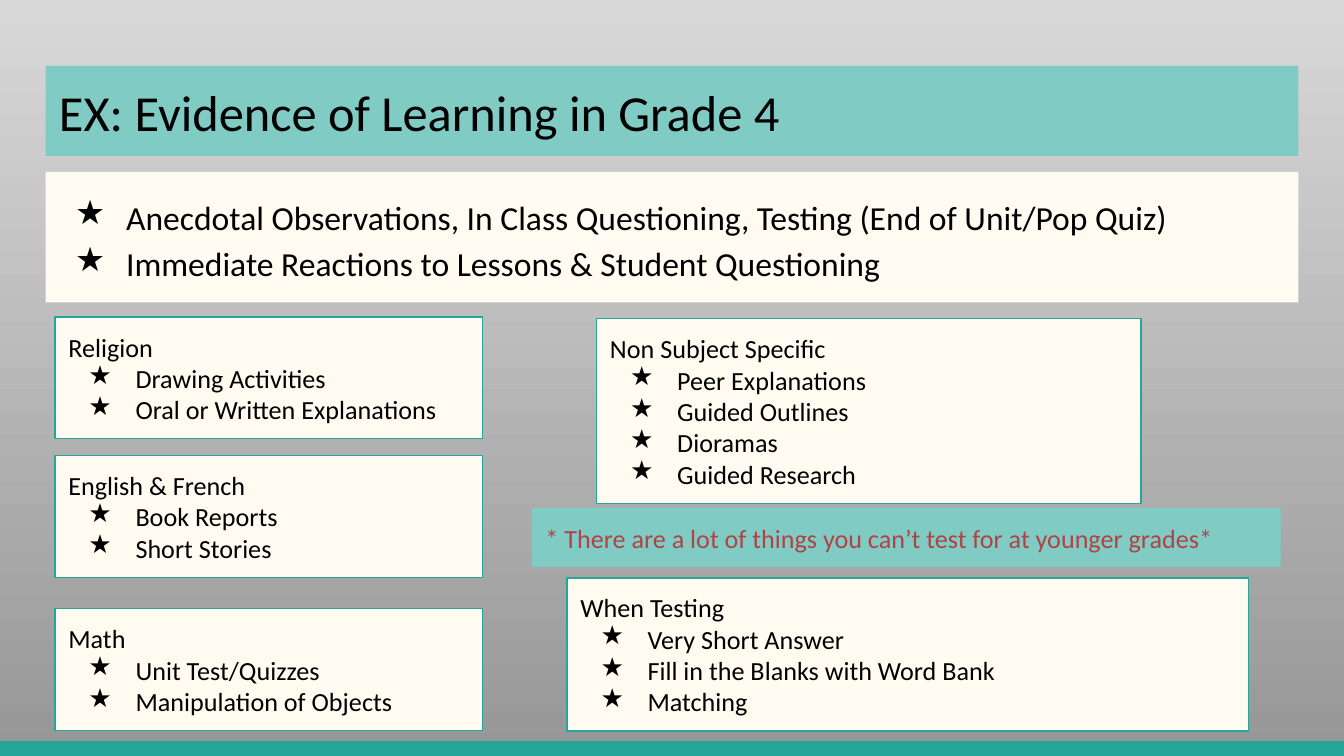
import dataclasses

import lxml.etree
import pptx
import pptx.dml.color
import pptx.enum.shapes
import pptx.enum.text
import pptx.oxml.ns
import pptx.util


@dataclasses.dataclass(frozen=True)
class Theme:
    font: str = "Calibri"
    ink: str = "000000"
    warning: str = "AF4345"
    paper: str = "FFFBF0"
    band: str = "80CBC4"
    accent: str = "26A69A"
    backdrop: tuple = ("D8D8D8", "979797")
    title_size: int = 27
    lead_size: int = 18
    card_size: int = 14
    border: float = 0.75
    bullet: str = "★"


COLUMNS, ROWS = 100, 56.25
CELL = pptx.util.Inches(0.1)
PADDING_ROWS, LINE_ROWS = 2, 2.35


def set_attributes(target, values):
    for name, value in values.items():
        setattr(target, name, value)


def color(code):
    return pptx.dml.color.RGBColor.from_string(code)


class SlideBuilder:
    def __init__(self, presentation, theme):
        self.theme = theme
        self.slide = presentation.slides.add_slide(presentation.slide_layouts[6])

    def backdrop(self):
        fill = self.slide.background.fill
        fill.gradient()
        fill.gradient_angle = 270
        for stop, code in zip(fill.gradient_stops, self.theme.backdrop):
            stop.color.rgb = color(code)

    def panel(self, column, row, columns, rows, fill, border=None):
        shape = self.slide.shapes.add_shape(
            pptx.enum.shapes.MSO_SHAPE.RECTANGLE,
            *(round(length * CELL) for length in (column, row, columns, rows)),
        )
        shape.shadow.inherit = False
        shape.fill.solid()
        shape.fill.fore_color.rgb = color(fill)
        if border:
            shape.line.color.rgb = color(border)
            shape.line.width = pptx.util.Pt(self.theme.border)
        else:
            shape.line.fill.background()
        sides = ("left", "top", "right", "bottom")
        set_attributes(shape.text_frame, {
            "word_wrap": True,
            "vertical_anchor": pptx.enum.text.MSO_ANCHOR.MIDDLE,
            **{f"margin_{side}": CELL for side in sides},
        })
        return shape

    def add_lines(self, shape, lines, size, ink=None, bullets_from=None, hanging=0.35, spacing=1.0):
        frame = shape.text_frame
        for index, line in enumerate(lines):
            paragraph = frame.add_paragraph() if index else frame.paragraphs[0]
            set_attributes(paragraph, {
                "text": line,
                "alignment": pptx.enum.text.PP_ALIGN.LEFT,
                "line_spacing": spacing,
            })
            set_attributes(paragraph.runs[0].font, {
                "name": self.theme.font,
                "size": pptx.util.Pt(size),
            })
            paragraph.runs[0].font.color.rgb = color(ink or self.theme.ink)
            if bullets_from is not None and index >= bullets_from:
                self.star(paragraph, hanging)

    def star(self, paragraph, hanging):
        properties = paragraph._p.get_or_add_pPr()
        properties.set("marL", str(pptx.util.Inches(0.5)))
        properties.set("indent", str(-pptx.util.Inches(hanging)))
        qualified = pptx.oxml.ns.qn
        bullet_color = lxml.etree.SubElement(properties, qualified("a:buClr"))
        lxml.etree.SubElement(bullet_color, qualified("a:srgbClr"), val=self.theme.ink)
        lxml.etree.SubElement(properties, qualified("a:buChar"), char=self.theme.bullet)

    def title(self, text, *area):
        self.add_lines(self.panel(*area, self.theme.band), [text], self.theme.title_size)

    def lead(self, lines, *area):
        shape = self.panel(*area, self.theme.paper)
        self.add_lines(shape, lines, self.theme.lead_size, bullets_from=0, hanging=0.38, spacing=1.15)

    def card(self, heading, items, column, row, columns):
        lines = [heading, *items]
        rows = PADDING_ROWS + LINE_ROWS * len(lines)
        shape = self.panel(column, row, columns, rows, self.theme.paper, self.theme.accent)
        self.add_lines(shape, lines, self.theme.card_size, bullets_from=1)

    def callout(self, text, *area):
        shape = self.panel(*area, self.theme.band)
        self.add_lines(shape, [text], self.theme.card_size, ink=self.theme.warning)


def main():
    presentation = pptx.Presentation()
    set_attributes(presentation, {
        "slide_width": COLUMNS * CELL,
        "slide_height": round(ROWS * CELL),
    })
    theme = Theme()
    builder = SlideBuilder(presentation, theme)
    builder.backdrop()
    builder.panel(0, ROWS - 1.1, COLUMNS, 1.1, theme.accent)

    margin = 3.4
    width = COLUMNS - 2 * margin
    builder.title("EX: Evidence of Learning in Grade 4", margin, 4.9, width, 6.7)
    builder.lead([
        "Anecdotal Observations, In Class Questioning, Testing (End of Unit/Pop Quiz)",
        "Immediate Reactions to Lessons & Student Questioning",
    ], margin, 12.8, width, 9.7)

    subjects = [
        (23.6, "Religion", ["Drawing Activities", "Oral or Written Explanations"]),
        (33.9, "English & French", ["Book Reports", "Short Stories"]),
        (45.3, "Math", ["Unit Test/Quizzes", "Manipulation of Objects"]),
    ]
    for row, heading, items in subjects:
        builder.card(heading, items, 4.1, row, 31.8)

    builder.card("Non Subject Specific", [
        "Peer Explanations", "Guided Outlines", "Dioramas", "Guided Research",
    ], 44.4, 23.7, 40.5)
    builder.callout(
        "* There are a lot of things you can’t test for at younger grades*",
        39.6, 37.8, 55.7, 4.4,
    )
    builder.card("When Testing", [
        "Very Short Answer", "Fill in the Blanks with Word Bank", "Matching",
    ], 42.2, 43, 50.7)
    presentation.save("out.pptx")


if __name__ == "__main__":
    main()
